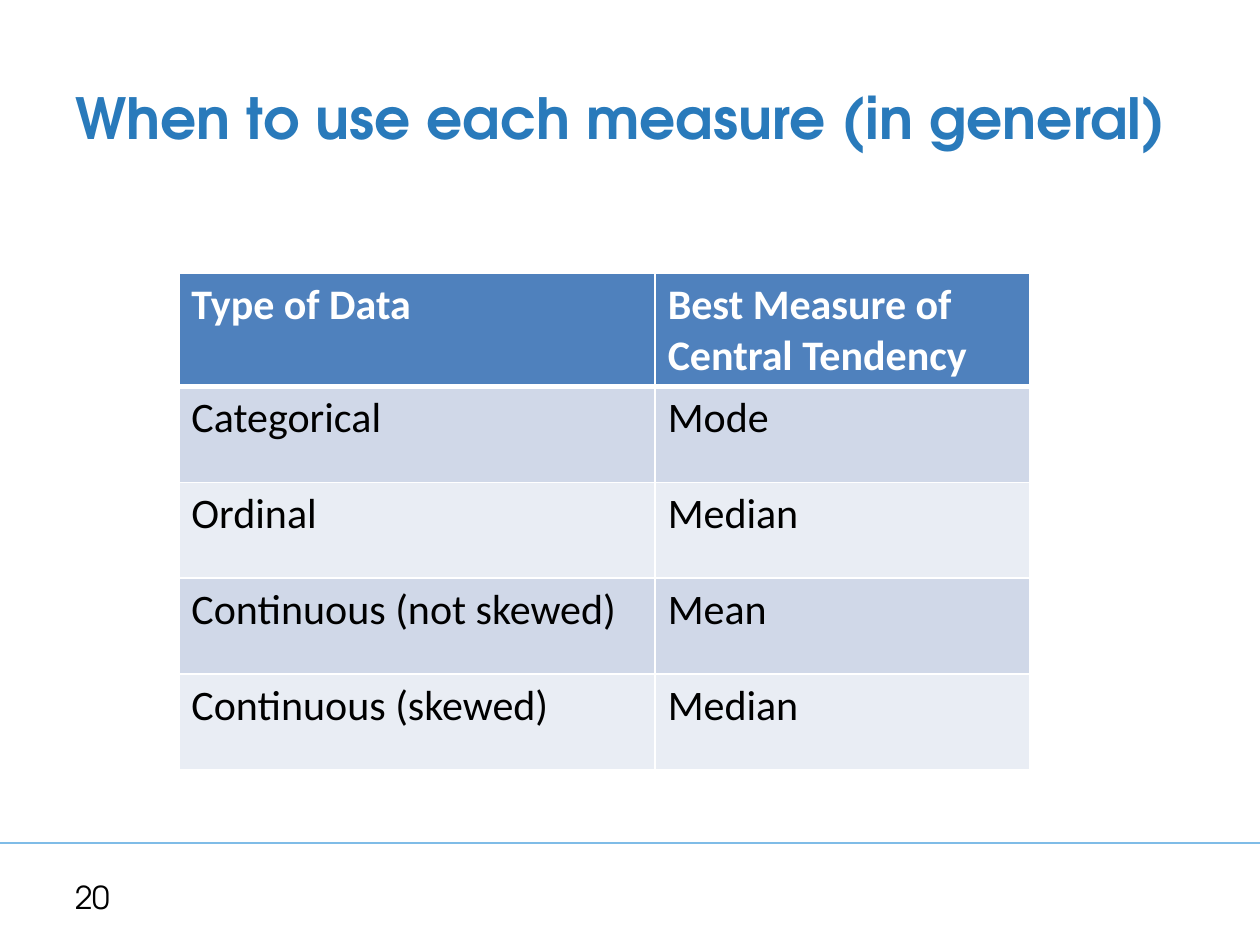
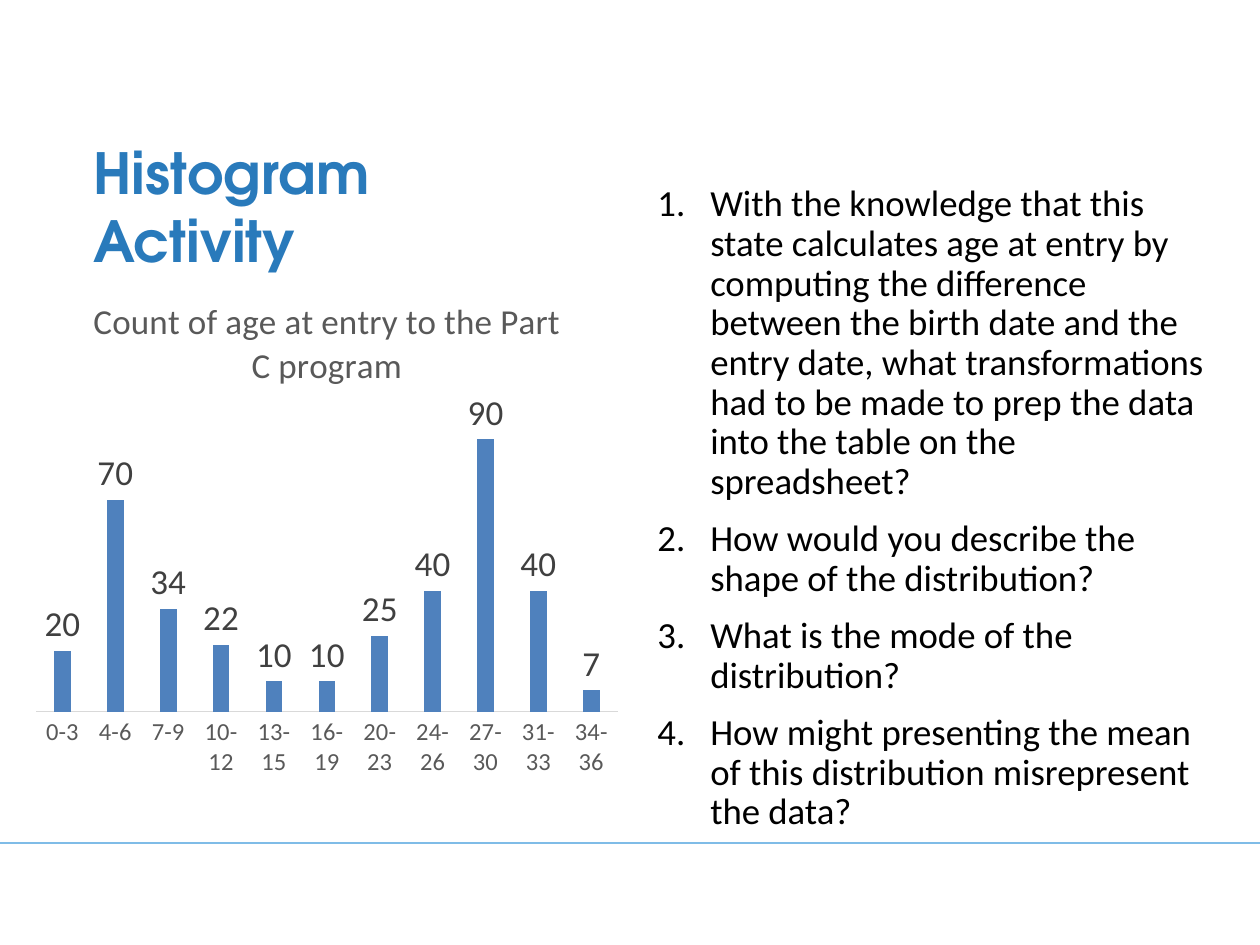
from dataclasses import dataclass

from lxml import etree
from pptx import Presentation
from pptx.chart.data import CategoryChartData
from pptx.dml.color import RGBColor
from pptx.enum import chart as ch, shapes, text
from pptx.oxml import ns
from pptx.util import Pt


@dataclass(frozen=True)
class Theme:
    heading: str = "TeX Gyre Adventor"
    body: str = "Calibri"
    title_blue: str = "297ABB"
    rule_blue: str = "7FBCE7"
    accent: str = "4F81BD"
    bands: tuple = ("D0D8E8", "E9EDF4")
    white: str = "FFFFFF"
    black: str = "000000"
    label_grey: str = "404040"
    axis_grey: str = "595959"
    axis_line: str = "D9D9D9"
    title_size: float = 32.4
    table_size: float = 24
    list_size: float = 21
    chart_size: float = 20
    number_size: float = 18
    axis_size: float = 14


T = Theme()
WIDTH, HEIGHT = 720, 540
RULE_Y = 481.7

MEASURES_TITLE = "When to use each measure (in general)"
MEASURES_NUMBER = "20"
MEASURES = [
    (["Type of Data"], ["Best Measure of", "Central Tendency"]),
    (["Categorical"], ["Mode"]),
    (["Ordinal"], ["Median"]),
    (["Continuous (not skewed)"], ["Mean"]),
    (["Continuous (skewed)"], ["Median"]),
]
COLUMN_WIDTHS = (272.2, 213.8)
HEADER_HEIGHT, ROW_HEIGHT = 64.8, 54.7

HISTOGRAM_TITLE = "Histogram Activity"
CHART_TITLE = "Count of age at entry to the Part C program"
AGE_COUNTS = {
    "0-3": 20, "4-6": 70, "7-9": 34, "10-12": 22, "13-15": 10, "16-19": 10,
    "20-23": 25, "24-26": 40, "27-30": 90, "31-33": 40, "34-36": 7,
}
QUESTIONS = [
    "With the knowledge that this state calculates age at entry by computing "
    "the difference between the birth date and the entry date, what "
    "transformations had to be made to prep the data into the table on the "
    "spreadsheet?",
    "How would you describe the shape of the distribution?",
    "What is the mode of the distribution?",
    "How might presenting the mean of this distribution misrepresent the data?",
]


def rgb(color):
    return RGBColor.from_string(color)


def style_font(font, size, color, name=T.body, bold=False):
    font.size, font.name, font.bold = Pt(size), name, bold
    font.color.rgb = rgb(color)


def write(tf, paragraphs, size, color=T.black, name=T.body, bold=False,
          spacing=None, before=None, number_indent=None):
    """Fill a text frame, one paragraph per string, numbered if indented."""
    for i, words in enumerate(paragraphs):
        p = tf.add_paragraph() if i else tf.paragraphs[0]
        p.alignment = text.PP_ALIGN.LEFT
        if spacing:
            p.line_spacing = spacing
        if before is not None:
            p.space_before = Pt(before)
        if number_indent:
            pPr = p._p.get_or_add_pPr()
            pPr.set("marL", str(Pt(number_indent)))
            pPr.set("indent", str(-Pt(number_indent)))
            etree.SubElement(pPr, ns.qn("a:buFont"), typeface="+mj-lt")
            etree.SubElement(pPr, ns.qn("a:buAutoNum"), type="arabicPeriod")
        r = p.add_run()
        r.text = words
        style_font(r.font, size, color, name, bold)


def add_text(s, box, paragraphs, anchor=text.MSO_ANCHOR.TOP, **fmt):
    tf = s.shapes.add_textbox(*map(Pt, box)).text_frame
    tf.word_wrap, tf.vertical_anchor = True, anchor
    write(tf, paragraphs, **fmt)


def add_slide(prs, title, title_box):
    """Add a slide with the shared title style and footer rule."""
    s = prs.slides.add_slide(prs.slide_layouts[5])
    rule = s.shapes.add_connector(shapes.MSO_CONNECTOR.STRAIGHT,
                                  0, Pt(RULE_Y), Pt(WIDTH), Pt(RULE_Y))
    rule.line.color.rgb, rule.line.width = rgb(T.rule_blue), Pt(1.5)
    etree.SubElement(rule._element.spPr, ns.qn("a:effectLst"))
    sp = s.shapes.title
    sp.left, sp.top, sp.width, sp.height = map(Pt, title_box)
    tf = sp.text_frame
    tf.word_wrap, tf.auto_size = True, text.MSO_AUTO_SIZE.NONE
    tf.vertical_anchor = text.MSO_ANCHOR.MIDDLE
    write(tf, [title], T.title_size, T.title_blue, T.heading, bold=True)
    return s


def set_borders(cell, top, bottom):
    tcPr = cell._tc.get_or_add_tcPr()
    for i, (side, width) in enumerate(
            (("L", 1), ("R", 1), ("T", top), ("B", bottom))):
        ln = etree.Element(ns.qn(f"a:ln{side}"), w=str(Pt(width)))
        fill = etree.SubElement(ln, ns.qn("a:solidFill"))
        etree.SubElement(fill, ns.qn("a:srgbClr"), val=T.white)
        tcPr.insert(i, ln)


def add_measures_table(s, left, top):
    heights = [HEADER_HEIGHT] + [ROW_HEIGHT] * (len(MEASURES) - 1)
    table = s.shapes.add_table(
        len(MEASURES), len(COLUMN_WIDTHS), Pt(left), Pt(top),
        Pt(sum(COLUMN_WIDTHS)), Pt(sum(heights))).table
    for column, width in zip(table.columns, COLUMN_WIDTHS):
        column.width = Pt(width)
    for i, row in enumerate(MEASURES):
        table.rows[i].height = Pt(heights[i])
        header = i == 0
        for j, lines in enumerate(row):
            cell = table.cell(i, j)
            cell.fill.solid()
            cell.fill.fore_color.rgb = rgb(
                T.accent if header else T.bands[(i - 1) % 2])
            set_borders(cell, top=3 if i == 1 else 1, bottom=3 if header else 1)
            write(cell.text_frame, lines, T.table_size,
                  T.white if header else T.black, bold=header)


def set_plot_area(chart, **fractions):
    """Place the inner plot area by fractions x, y, w, h of the chart."""
    area = chart._chartSpace.chart.plotArea
    for old in area.findall(ns.qn("c:layout")):
        area.remove(old)
    layout = etree.Element(ns.qn("c:layout"))
    manual = etree.SubElement(layout, ns.qn("c:manualLayout"))
    settings = {"layoutTarget": "inner", "xMode": "edge", "yMode": "edge"}
    for tag, value in (settings | fractions).items():
        etree.SubElement(manual, ns.qn(f"c:{tag}"), val=str(value))
    area.insert(0, layout)


def add_age_chart(s, box):
    data = CategoryChartData()
    data.categories = list(AGE_COUNTS)
    data.add_series("Series 1", list(AGE_COUNTS.values()))
    chart = s.shapes.add_chart(ch.XL_CHART_TYPE.COLUMN_CLUSTERED,
                               *map(Pt, box), data).chart
    style_font(chart.font, 10, T.black)
    chart.has_legend = False
    chart.has_title = True
    write(chart.chart_title.text_frame, [CHART_TITLE], T.chart_size, T.axis_grey)
    chart.chart_title.text_frame.paragraphs[0].alignment = text.PP_ALIGN.CENTER
    chart.chart_title.include_in_layout = False

    ages, counts = chart.category_axis, chart.value_axis
    ages.major_tick_mark = ch.XL_TICK_MARK.NONE
    ages.format.line.color.rgb, ages.format.line.width = rgb(T.axis_line), Pt(0.75)
    style_font(ages.tick_labels.font, T.axis_size, T.axis_grey)
    counts.visible = counts.has_major_gridlines = False
    counts.minimum_scale, counts.maximum_scale = 0, 100

    plot = chart.plots[0]
    plot.gap_width, plot.overlap, plot.vary_by_categories = 219, -27, False
    plot.has_data_labels = True
    labels = plot.data_labels
    labels.show_value = True
    labels.position = ch.XL_LABEL_POSITION.OUTSIDE_END
    style_font(labels.font, T.chart_size, T.label_grey)
    bars = plot.series[0].format.fill
    bars.solid()
    bars.fore_color.rgb = rgb(T.accent)
    set_plot_area(chart, x=0.02, y=0.265, w=0.96, h=0.59)


def main():
    prs = Presentation()
    prs.slide_width, prs.slide_height = Pt(WIDTH), Pt(HEIGHT)

    s = add_slide(prs, MEASURES_TITLE, (36, 21.6, 648, 90))
    add_text(s, (36, 498.2, 168, 28.8), [MEASURES_NUMBER],
             anchor=text.MSO_ANCHOR.MIDDLE, size=T.number_size, name=T.heading)
    add_measures_table(s, 102.2, 156.2)

    s = add_slide(prs, HISTOGRAM_TITLE, (46, 78.5, 269.3, 78.5))
    add_age_chart(s, (13.7, 156.2, 346.3, 293))
    add_text(s, (368.6, 102.2, 337.7, 353.5), QUESTIONS, size=T.list_size,
             spacing=0.9, before=10, number_indent=30.2)

    prs.save("out.pptx")


if __name__ == "__main__":
    main()
